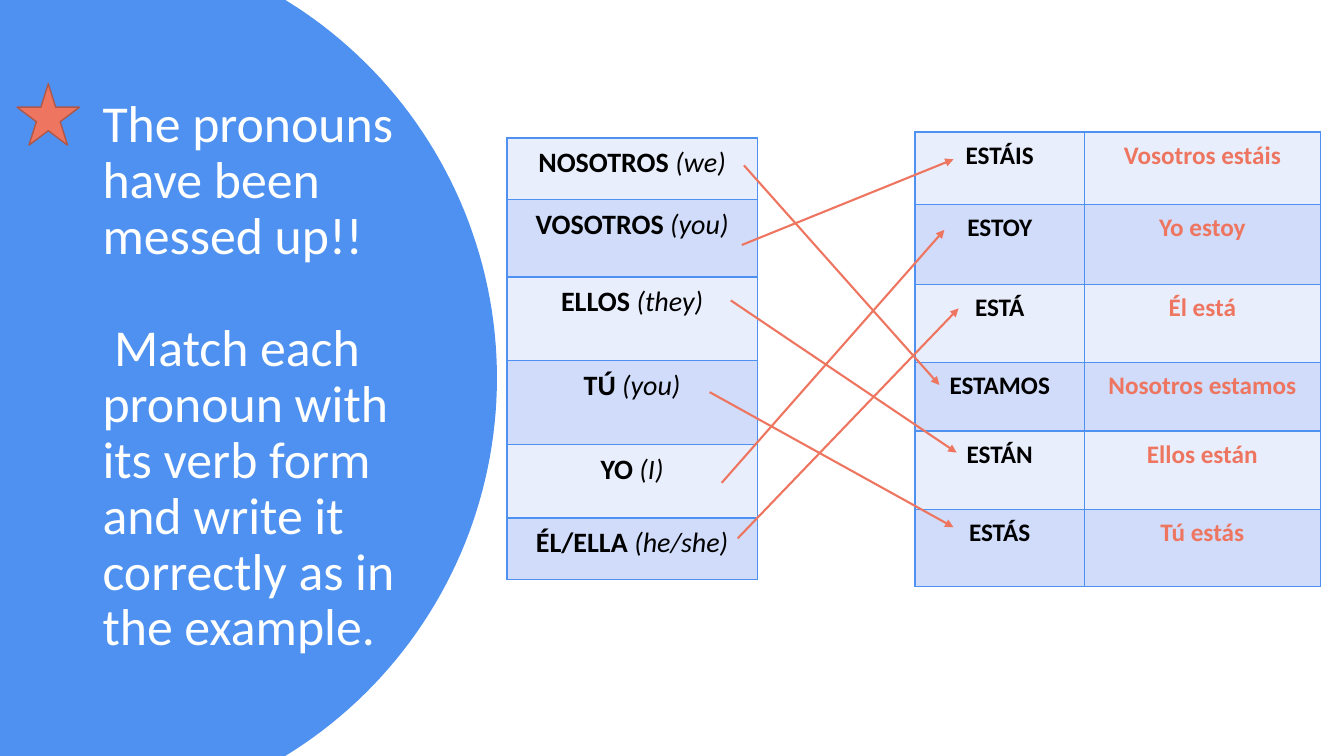
from math import asin, cos, sin

from lxml import etree
from pptx import Presentation
from pptx.dml.color import RGBColor
from pptx.enum.shapes import MSO_CONNECTOR, MSO_SHAPE
from pptx.enum.text import MSO_ANCHOR, PP_ALIGN
from pptx.oxml import parse_xml
from pptx.oxml.ns import nsdecls, qn
from pptx.util import Pt

LINE = MSO_CONNECTOR.STRAIGHT
STAR = MSO_SHAPE.STAR_5_POINT
MIDDLE = MSO_ANCHOR.MIDDLE
CENTER = PP_ALIGN.CENTER
HEX = {"blue": "4E91F0", "coral": "EE7661", "rust": "B05748", "pale": "E9EEFC",
       "mid": "D0DCF9", "black": "000000", "white": "FFFFFF"}
RGB = {name: RGBColor.from_string(code) for name, code in HEX.items()}

deck = Presentation()
deck.slide_width, deck.slide_height = Pt(960), Pt(540)
slide = deck.slides.add_slide(deck.slide_layouts[6])
shapes = slide.shapes


def add_run(para, text, size, color, bold=False, italic=False):
    run = para.add_run()
    run.text = text
    font = run.font
    font.name, font.size, font.bold, font.italic = "Calibri", Pt(size), bold, italic
    font.color.rgb = RGB[color]


def add_grid(left, top, widths, heights, rows, size):
    """Add a banded table; each cell is a list of (text, color, bold, italic)."""
    grid = shapes.add_table(len(rows), len(widths), Pt(left), Pt(top),
                            Pt(sum(widths)), Pt(sum(heights))).table
    for col, width in zip(grid.columns, widths):
        col.width = Pt(width)
    for i, (row, height) in enumerate(zip(rows, heights)):
        grid.rows[i].height = Pt(height)
        for j, parts in enumerate(row):
            cell = grid.cell(i, j)
            cell.margin_left = cell.margin_right = Pt(11.5)
            cell.margin_top = cell.margin_bottom = Pt(5.75)
            cell.fill.solid()
            cell.fill.fore_color.rgb = RGB["mid" if i % 2 else "pale"]
            props = cell._tc.get_or_add_tcPr()
            for k, side in enumerate("LRTB"):
                props.insert(k, parse_xml(
                    f'<a:ln{side} {nsdecls("a")} w="{Pt(1)}"><a:solidFill>'
                    f'<a:srgbClr val="{HEX["blue"]}"/></a:solidFill></a:ln{side}>'))
            para = cell.text_frame.paragraphs[0]
            para.alignment = CENTER
            for text, color, bold, italic in parts:
                add_run(para, text, size, color, bold, italic)


# Blue panel with a circular right edge
mid_x, mid_y, radius = 38.3, 270, 316.7
half, steps = asin(mid_y / radius), 80
angles = [half * (2 * n / steps - 1) for n in range(steps + 1)]
arc = [(mid_x + radius * cos(a), mid_y + radius * sin(a)) for a in angles]
pen = shapes.build_freeform(0, 0, scale=Pt(1) / 100)
pen.add_line_segments([(round(x * 100), round(y * 100)) for x, y in arc] + [(0, 54000)])
panel = pen.convert_to_shape()
panel.shadow.inherit = False
panel.fill.solid()
panel.fill.fore_color.rgb = RGB["blue"]
panel.line.fill.background()

# Task text
box = shapes.add_textbox(Pt(66.2), Pt(50.4), Pt(232.6), Pt(438.5))
frame = box.text_frame
frame.word_wrap = True
frame.vertical_anchor = MIDDLE
task = ["The pronouns have been messed up!!",
        " Match each pronoun with its verb form and write it correctly as in the example."]
for i, text in enumerate(task):
    para = frame.add_paragraph() if i else frame.paragraphs[0]
    para.line_spacing = 0.9
    para.space_before = Pt(40 * i)
    add_run(para, text, 37, "white")

# Verb forms with answers
verbs = [("ESTÁIS", "Vosotros estáis"), ("ESTOY", "Yo estoy"), ("ESTÁ", "Él está"),
         ("ESTAMOS", "Nosotros estamos"), ("ESTÁN", "Ellos están"), ("ESTÁS", "Tú estás")]
add_grid(653.6, 94.3, [121, 168.5], [51.6, 57.6, 55.4, 49, 56.2, 55],
         [[[(verb, "black", True, False)], [(answer, "coral", True, False)]]
          for verb, answer in verbs], 18)

star = shapes.add_shape(STAR, Pt(12.2), Pt(59.8), Pt(44.6), Pt(43.9))
star.shadow.inherit = False
star.fill.solid()
star.fill.fore_color.rgb = RGB["coral"]
star.line.color.rgb = RGB["rust"]
star.line.width = Pt(1)

# Pronouns
nouns = [("NOSOTROS", "we"), ("VOSOTROS", "you"), ("ELLOS", "they"),
         ("TÚ", "you"), ("YO", "I"), ("ÉL/ELLA", "he/she")]
add_grid(362.2, 98.6, [178.6], [43.9, 55.4, 59.8, 59.8, 52.6, 43.9],
         [[[(noun + " ", "black", True, False), (f"({sense})", "black", False, True)]]
          for noun, sense in nouns], 20)

# Arrows from pronoun to verb form
arrows = [(531.4, 118.1, 671, 275), (527, 384.5, 684.7, 220.3),
          (515.5, 344.9, 674.6, 164.2), (529.9, 175, 681.1, 113.8),
          (522, 214.6, 683.3, 323.3), (506.9, 280.1, 681.1, 376.6)]
for ends in arrows:
    arrow = shapes.add_connector(LINE, *[Pt(v) for v in ends])
    arrow.line.color.rgb = RGB["coral"]
    arrow.line.width = Pt(1.5)
    etree.SubElement(arrow.line._get_or_add_ln(), qn("a:tailEnd"), type="triangle")
    etree.SubElement(arrow._element.spPr, qn("a:effectLst"))

deck.save("out.pptx")
